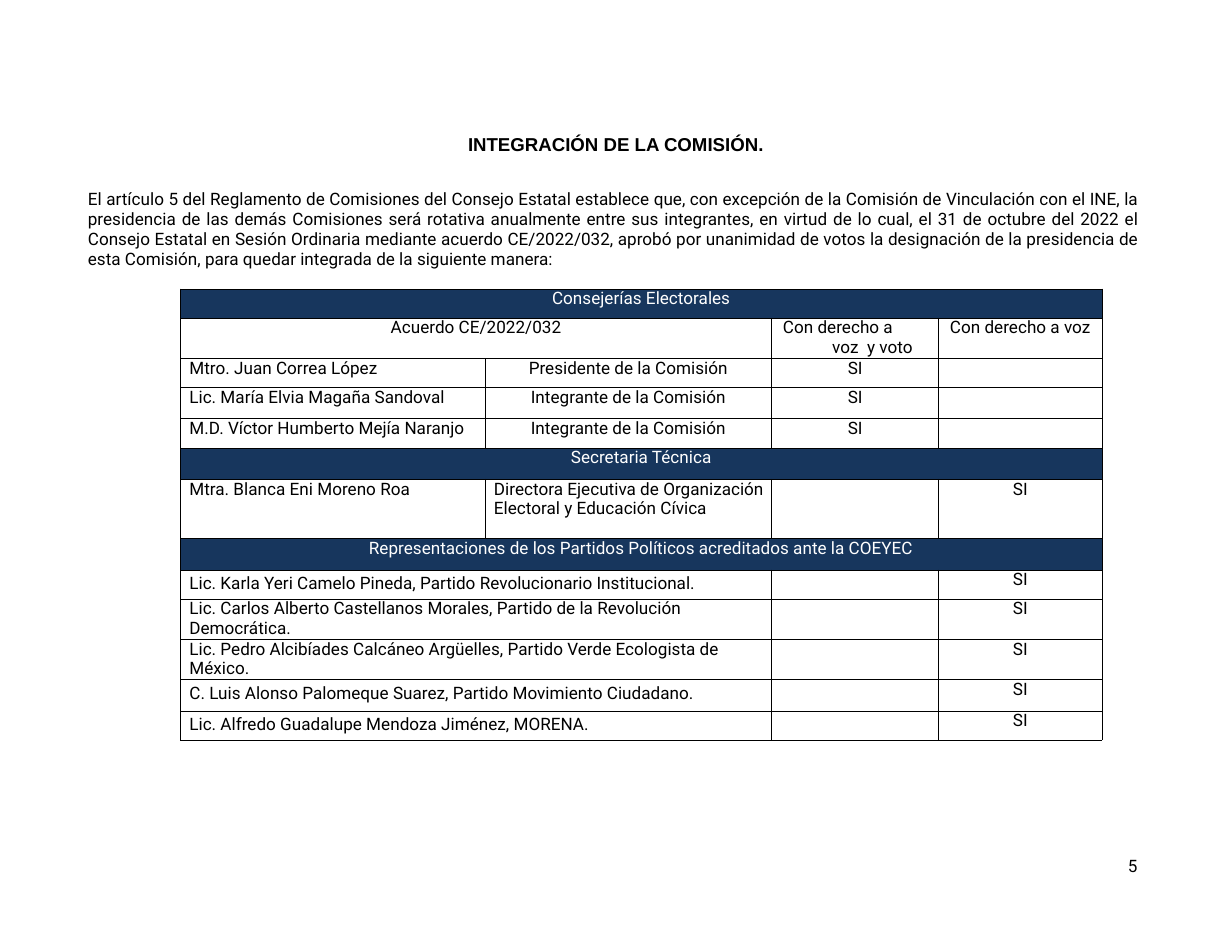
from dataclasses import dataclass

from lxml import etree
from pptx import Presentation
from pptx.dml.color import RGBColor
from pptx.enum import text as t
from pptx.oxml import ns
from pptx.util import Pt

BLACK, WHITE, NAVY = "000000", "FFFFFF", "17365D"
CENTER, LEFT, JUSTIFY = t.PP_ALIGN.CENTER, t.PP_ALIGN.LEFT, t.PP_ALIGN.JUSTIFY
COLUMN_WIDTHS = (195.84, 184.32, 107.28, 105.12)
INDENT = 5.76


@dataclass
class Entry:
    """One cell text; span is the number of columns it covers."""
    text: str = ""
    align: t.PP_ALIGN = CENTER
    span: int = 1
    fill: str = ""
    color: str = BLACK
    indent: float = 0
    hanging: float = 0
    top: float = 0
    right: float = 0


@dataclass
class Row:
    height: float
    entries: list[Entry]


def band(title: str, height: float) -> Row:
    return Row(height, [Entry(title, span=4, fill=NAVY, color=WHITE)])


def member(name: str, role: str, height: float) -> Row:
    return Row(height, [Entry(name, LEFT, indent=INDENT), Entry(role),
                        Entry("SI"), Entry()])


def party(name: str, height: float, top: float = 0) -> Row:
    return Row(height, [Entry(name, LEFT, span=2, indent=INDENT, top=top),
                        Entry(), Entry("SI")])


ROWS = [
    band("Consejerías Electorales", 18.72),
    Row(25.92, [Entry("Acuerdo CE/2022/032", span=2),
                Entry("Con derecho a voz  y voto", LEFT, indent=38.9,
                      hanging=31.7, right=14),
                Entry("Con derecho a voz")]),
    member("Mtro. Juan Correa López", "Presidente de la Comisión", 18.72),
    member("Lic. María Elvia Magaña Sandoval", "Integrante de la Comisión", 20.16),
    member("M.D. Víctor Humberto Mejía Naranjo", "Integrante de la Comisión", 18.72),
    band("Secretaria Técnica", 20.16),
    Row(38.16, [Entry("Mtra. Blanca Eni Moreno Roa", LEFT, indent=INDENT),
                Entry("Directora Ejecutiva de Organización Electoral y Educación Cívica",
                      LEFT, indent=INDENT),
                Entry(), Entry("SI")]),
    band("Representaciones de los Partidos Políticos acreditados ante la COEYEC", 20.16),
    party("Lic. Karla Yeri Camelo Pineda, Partido Revolucionario Institucional.", 18.72, 2.2),
    party("Lic. Carlos Alberto Castellanos Morales, Partido de la Revolución Democrática.",
          25.92),
    party("Lic. Pedro Alcibíades Calcáneo Argüelles, Partido Verde Ecologista de México.",
          25.92),
    party("C. Luis Alonso Palomeque Suarez, Partido Movimiento Ciudadano.", 20.16, 2.9),
    party("Lic. Alfredo Guadalupe Mendoza Jiménez, MORENA.", 18.72, 2.2),
]

INTRODUCTION = (
    "El artículo 5 del Reglamento de Comisiones del Consejo Estatal establece que, con "
    "excepción de la Comisión de Vinculación con el INE, la presidencia de las demás "
    "Comisiones será rotativa anualmente entre sus integrantes, en virtud de lo cual, el "
    "31 de octubre del 2022 el Consejo Estatal en Sesión Ordinaria mediante acuerdo "
    "CE/2022/032, aprobó por unanimidad de votos la designación de la presidencia de esta "
    "Comisión, para quedar integrada de la siguiente manera:")


def rgb(value: str) -> RGBColor:
    return RGBColor.from_string(value)


def format_runs(paragraph, size: float = 11, font: str = "Roboto",
                color: str = BLACK, bold: bool = False) -> None:
    for run in paragraph.runs:
        run.font.size, run.font.name, run.font.bold = Pt(size), font, bold
        run.font.color.rgb = rgb(color)


def fill_frame(shape, content: str, align: t.PP_ALIGN, **style):
    """Put one paragraph in a shape without insets and return it."""
    frame = shape.text_frame
    frame.margin_left = frame.margin_right = frame.margin_top = frame.margin_bottom = 0
    frame.word_wrap = True
    frame.auto_size = t.MSO_AUTO_SIZE.NONE
    frame.vertical_anchor = t.MSO_ANCHOR.TOP
    frame.text = content
    paragraph = frame.paragraphs[0]
    paragraph.alignment = align
    format_runs(paragraph, **style)
    return paragraph


def add_borders(cell) -> None:
    properties = cell._tc.get_or_add_tcPr()
    for side in ("a:lnL", "a:lnR", "a:lnT", "a:lnB"):
        line = etree.SubElement(properties, ns.qn(side), w=str(Pt(0.5)))
        solid = etree.SubElement(line, ns.qn("a:solidFill"))
        etree.SubElement(solid, ns.qn("a:srgbClr"), val=BLACK)


def fill_cell(cell, entry: Entry) -> None:
    cell.margin_left = cell.margin_bottom = 0
    cell.margin_right, cell.margin_top = Pt(entry.right), Pt(entry.top)
    add_borders(cell)
    if entry.fill:
        cell.fill.solid()
        cell.fill.fore_color.rgb = rgb(entry.fill)
    else:
        cell.fill.background()
    paragraph = cell.text_frame.paragraphs[0]
    if not entry.text:
        etree.SubElement(paragraph._p, ns.qn("a:endParaRPr"), sz="1100")
        return
    paragraph.text = entry.text
    paragraph.alignment = entry.align
    paragraph.line_spacing = Pt(12.75)
    if entry.indent:
        paragraph_properties = paragraph._p.get_or_add_pPr()
        paragraph_properties.set("marL", str(Pt(entry.indent)))
        paragraph_properties.set("indent", str(Pt(-entry.hanging)))
    format_runs(paragraph, color=entry.color)


def add_commission_table(slide) -> None:
    heights = [row.height for row in ROWS]
    table = slide.shapes.add_table(
        len(ROWS), len(COLUMN_WIDTHS), Pt(116), Pt(185.75),
        Pt(sum(COLUMN_WIDTHS)), Pt(sum(heights))).table
    table.first_row = table.horz_banding = False
    for column, width in zip(table.columns, COLUMN_WIDTHS):
        column.width = Pt(width)
    for r, row in enumerate(ROWS):
        table.rows[r].height = Pt(row.height)
        c = 0
        for entry in row.entries:
            last = c + entry.span - 1
            if entry.span > 1:
                table.cell(r, c).merge(table.cell(r, last))
            fill_cell(table.cell(r, c), entry)
            for covered in range(c + 1, last + 1):
                fill_cell(table.cell(r, covered), Entry(fill=entry.fill))
            c = last + 1


def main() -> None:
    deck = Presentation()
    deck.slide_width, deck.slide_height = Pt(792), Pt(612)
    slide = deck.slides.add_slide(deck.slide_layouts[5])

    title = slide.shapes.title
    title.left, title.top, title.width, title.height = Pt(55.5), Pt(85.5), Pt(681), Pt(15)
    fill_frame(title, "INTEGRACIÓN DE LA COMISIÓN.", CENTER,
               size=12, font="Arial", bold=True)

    introduction = slide.shapes.add_textbox(Pt(56.5), Pt(122.3), Pt(676.5), Pt(52))
    fill_frame(introduction, INTRODUCTION, JUSTIFY).line_spacing = 0.96

    add_commission_table(slide)

    page_number = slide.shapes.add_textbox(Pt(725), Pt(550), Pt(13), Pt(14.5))
    fill_frame(page_number, "5", LEFT)
    deck.save("out.pptx")


if __name__ == "__main__":
    main()
